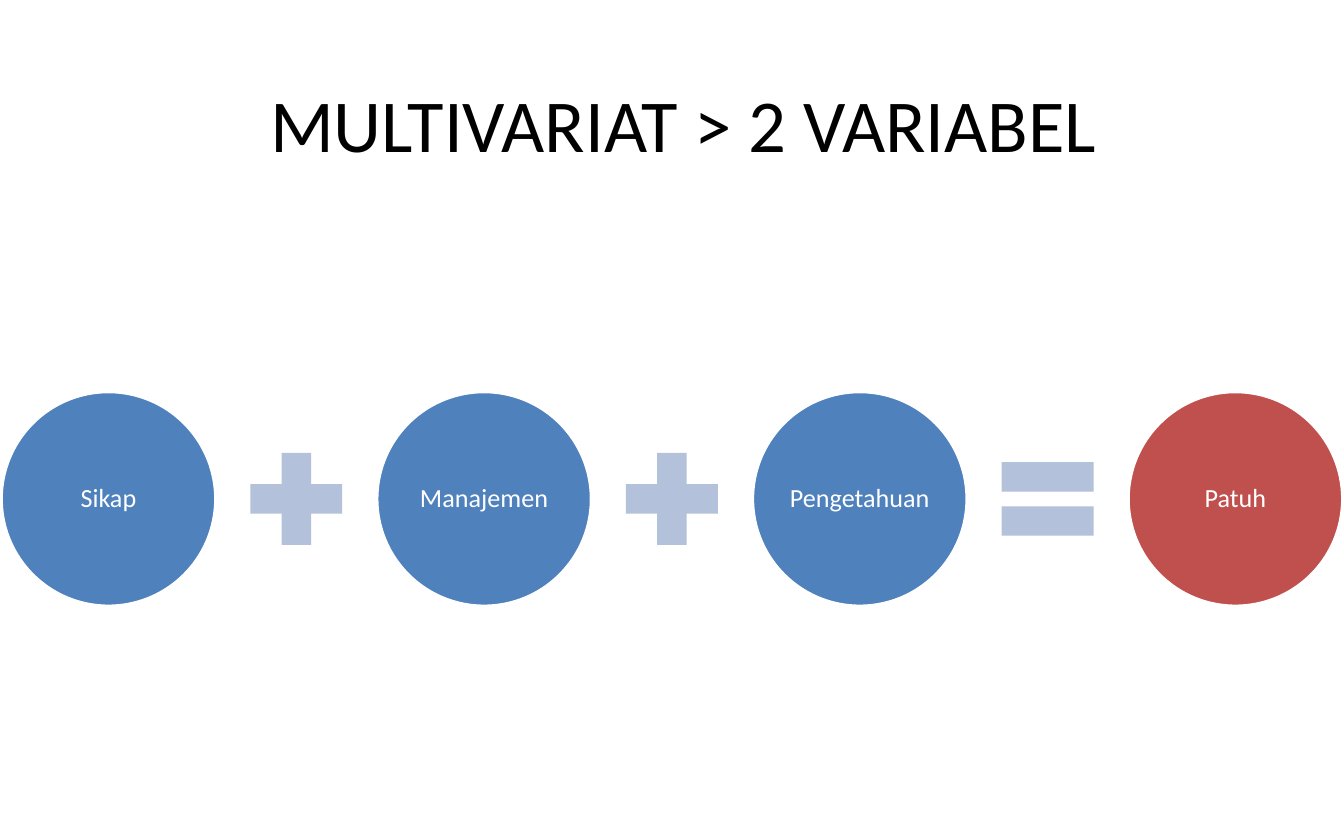
from dataclasses import dataclass

from pptx import Presentation
from pptx.dml.color import RGBColor
from pptx.enum.shapes import MSO_SHAPE
from pptx.enum.text import MSO_ANCHOR, MSO_AUTO_SIZE, PP_ALIGN
from pptx.shapes.autoshape import Shape
from pptx.slide import Slide
from pptx.util import Pt

COLORS = {
    "black": "000000",
    "white": "FFFFFF",
    "factor": "4F81BD",
    "result": "C0504D",
    "operator": "B3C1DB",
}

# Equation layout, in points
SLIDE_WIDTH, SLIDE_HEIGHT = 720, 450
CENTER_Y = 267.3
CIRCLE_SIZE = 115.2
OPERATOR_SIZE = 67
PITCH = 201.25


@dataclass
class Term:
    label: str
    color: str


TERMS = [
    Term("Sikap", "factor"),
    Term("Manajemen", "factor"),
    Term("Pengetahuan", "factor"),
    Term("Patuh", "result"),
]
OPERATORS = [MSO_SHAPE.MATH_PLUS, MSO_SHAPE.MATH_PLUS, MSO_SHAPE.MATH_EQUAL]


def rgb(name: str) -> RGBColor:
    return RGBColor.from_string(COLORS[name])


def set_attributes(target: object, values: dict) -> None:
    for name, value in values.items():
        setattr(target, name, value)


def write_text(shape: Shape, text: str, size: float, color: str, margin: dict) -> None:
    frame = shape.text_frame
    frame.text = text
    set_attributes(frame, {
        "word_wrap": True,
        "auto_size": MSO_AUTO_SIZE.NONE,
        "vertical_anchor": MSO_ANCHOR.MIDDLE,
        **margin,
    })
    paragraph = frame.paragraphs[0]
    paragraph.alignment = PP_ALIGN.CENTER
    set_attributes(paragraph.runs[0].font, {"name": "Calibri", "size": Pt(size)})
    paragraph.runs[0].font.color.rgb = rgb(color)


def add_centered(slide: Slide, kind: MSO_SHAPE, center_x: float, size: float,
                 color: str) -> Shape:
    shape = slide.shapes.add_shape(
        kind, Pt(center_x - size / 2), Pt(CENTER_Y - size / 2), Pt(size), Pt(size))
    shape.shadow.inherit = False
    shape.fill.solid()
    shape.fill.fore_color.rgb = rgb(color)
    shape.line.fill.background()
    return shape


def add_term(slide: Slide, term: Term, center_x: float) -> None:
    circle = add_centered(slide, MSO_SHAPE.OVAL, center_x, CIRCLE_SIZE, term.color)
    circle.line.color.rgb = rgb("white")
    circle.line.width = Pt(2)
    sides = ("left", "top", "right", "bottom")
    write_text(circle, term.label, 14, "white",
               {f"margin_{side}": Pt(1.4) for side in sides})
    circle.text_frame.paragraphs[0].line_spacing = 0.9


def main() -> None:
    presentation = Presentation()
    set_attributes(presentation, {
        "slide_width": Pt(SLIDE_WIDTH), "slide_height": Pt(SLIDE_HEIGHT)})
    slide = presentation.slides.add_slide(presentation.slide_layouts[5])

    # Title
    title = slide.shapes.title
    set_attributes(title, {
        "left": Pt(60), "top": Pt(38), "width": Pt(612), "height": Pt(55.5)})
    write_text(title, "MULTIVARIAT > 2 VARIABEL", 40, "black", {})

    # Equation: circles with an operator halfway between neighbours
    first_x = (SLIDE_WIDTH - PITCH * (len(TERMS) - 1)) / 2
    for index, term in enumerate(TERMS):
        add_term(slide, term, first_x + index * PITCH)
    for index, operator in enumerate(OPERATORS):
        add_centered(slide, operator, first_x + (index + 0.5) * PITCH,
                     OPERATOR_SIZE, "operator")

    presentation.save("out.pptx")


if __name__ == "__main__":
    main()
